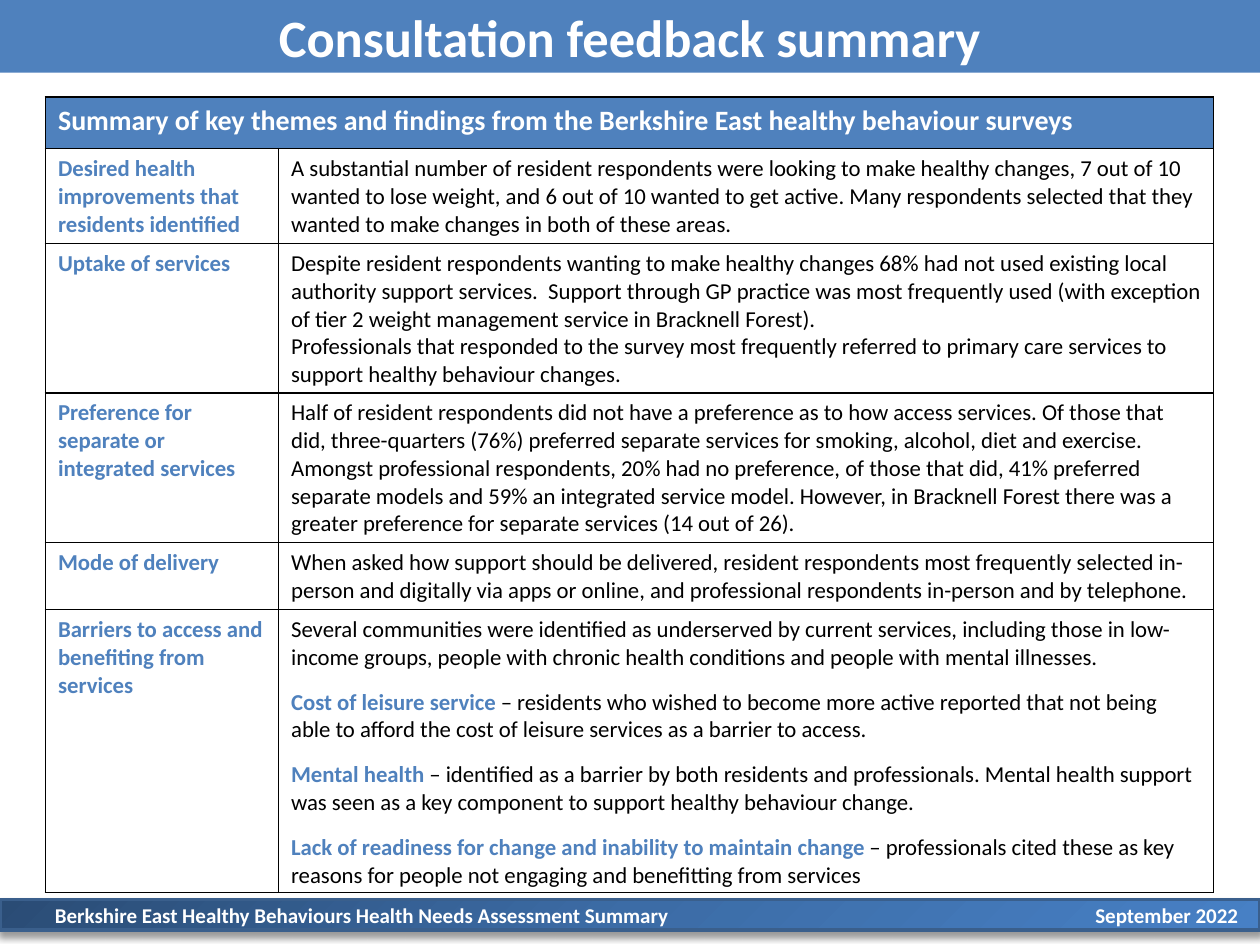
from lxml import etree
from pptx import Presentation
from pptx.enum import shapes, text
from pptx.oxml import ns
from pptx.util import Pt
from pptx.dml.color import RGBColor

INK = {"blue": "4F81BD", "white": "FFFFFF", "black": "000000", "edge": "3A5F8C"}
FADE = [(0, "2A4C75"), (50, "3C6CA6"), (100, "4780C5")]
WIDE, HIGH = 720, 540
COLS = [133.2, 534.2]
ROWS = [29.5, 54.3, 85.2, 85.2, 38.5, 160.5]
HEAD = "Summary of key themes and findings from the Berkshire East healthy behaviour surveys"

# Each theme: label, paragraphs as (bold lead, body), gap between paragraphs
THEMES = [
    ("Desired health improvements that residents identified", [
        ("", "A substantial number of resident respondents were looking to make healthy changes, "
             "7 out of 10 wanted to lose weight, and 6 out of 10 wanted to get active. Many "
             "respondents selected that they wanted to make changes in both of these areas."),
    ], 0),
    ("Uptake of services", [
        ("", "Despite resident respondents wanting to make healthy changes 68% had not used "
             "existing local authority support services.  Support through GP practice was most "
             "frequently used (with exception of tier 2 weight management service in Bracknell "
             "Forest)."),
        ("", "Professionals that responded to the survey most frequently referred to primary "
             "care services to support healthy behaviour changes."),
    ], 0),
    ("Preference for separate or integrated services", [
        ("", "Half of resident respondents did not have a preference as to how access services. "
             "Of those that did, three-quarters (76%) preferred separate services for smoking, "
             "alcohol, diet and exercise."),
        ("", "Amongst professional respondents, 20% had no preference, of those that did, 41% "
             "preferred separate models and 59% an integrated service model. However, in "
             "Bracknell Forest there was a greater preference for separate services (14 out of 26)."),
    ], 0),
    ("Mode of delivery", [
        ("", "When asked how support should be delivered, resident respondents most frequently "
             "selected in-person and digitally via apps or online, and professional respondents "
             "in-person and by telephone."),
    ], 0),
    ("Barriers to access and benefiting from services", [
        ("", "Several communities were identified as underserved by current services, including "
             "those in low-income groups, people with chronic health conditions and people with "
             "mental illnesses."),
        ("Cost of leisure service ",
         "– residents who wished to become more active reported that not being able to afford "
         "the cost of leisure services as a barrier to access."),
        ("Mental health ",
         "– identified as a barrier by both residents and professionals. Mental health support "
         "was seen as a key component to support healthy behaviour change."),
        ("Lack of readiness for change and inability to maintain change ",
         "– professionals cited these as key reasons for people not engaging and benefitting "
         "from services"),
    ], 9.8),
]


def node(top, tag, **attrs):
    return etree.SubElement(top, ns.qn("a:" + tag), {k: str(v) for k, v in attrs.items()})


class Deck:
    """Holds the text style and the current slide."""

    def __init__(self, font):
        self.font = font
        self.file = Presentation()
        self.file.slide_width, self.file.slide_height = Pt(WIDE), Pt(HIGH)
        self.slide = self.file.slides.add_slide(self.file.slide_layouts[6])

    def run(self, para, words, size, tint, bold=True):
        run = para.add_run()
        run.text = words
        run.font.name, run.font.size, run.font.bold = self.font, Pt(size), bold
        run.font.color.rgb = RGBColor.from_string(INK[tint])

    def frame(self, shape, words, size, align, left=0, right=0):
        """Put one white line of text in the middle of a shape's height."""
        frame = shape.text_frame
        frame.word_wrap = True
        frame.vertical_anchor = text.MSO_ANCHOR.MIDDLE
        frame.margin_left, frame.margin_right = Pt(left), Pt(right)
        frame.margin_top = frame.margin_bottom = 0
        frame.paragraphs[0].alignment = align
        self.run(frame.paragraphs[0], words, size, "white")

    def bar(self, top, high):
        bar = self.slide.shapes.add_shape(
            shapes.MSO_SHAPE.RECTANGLE, 0, Pt(top), Pt(WIDE), Pt(high))
        bar.shadow.inherit = False
        bar.fill.solid()
        bar.fill.fore_color.rgb = RGBColor.from_string(INK["blue"])
        bar.line.fill.background()
        return bar

    def label(self, top, high, words, size, align, right):
        box = self.slide.shapes.add_textbox(Pt(WIDE / 2), Pt(top), Pt(WIDE / 2), Pt(high))
        self.frame(box, words, size, align, right=right)

    def shade(self, bar):
        """Give a bar the three-stop fade, an outline and a soft shadow."""
        bar.line.color.rgb = RGBColor.from_string(INK["edge"])
        bar.line.width = Pt(2)
        bar.fill.gradient()
        bar.fill.gradient_angle = 315
        props = bar.element.spPr
        stops = props.find(".//" + ns.qn("a:gsLst"))
        for stop in list(stops):
            stops.remove(stop)
        for place, tint in FADE:
            node(node(stops, "gs", pos=place * 1000), "srgbClr", val=tint)
        cast = node(props.find(ns.qn("a:effectLst")), "outerShdw", blurRad=Pt(4),
                    dist=Pt(3), dir=5400000, rotWithShape=0)
        node(node(cast, "srgbClr", val=INK["black"]), "alpha", val=40000)

    def grid(self, left, top, cols, rows):
        table = self.slide.shapes.add_table(
            len(rows), len(cols), Pt(left), Pt(top), Pt(sum(cols)), Pt(sum(rows))).table
        table.first_row = table.horz_banding = False
        for col, wide in zip(table.columns, cols):
            col.width = Pt(wide)
        for row, high in zip(table.rows, rows):
            row.height = Pt(high)
        for cell in table.iter_cells():
            props = cell._tc.get_or_add_tcPr()
            for side in ("lnL", "lnR", "lnT", "lnB"):
                line = node(props, side, w=Pt(1))
                node(node(line, "solidFill"), "srgbClr", val=INK["black"])
            cell.fill.background()
        return table

    def cell(self, cell, paras, gap=0):
        """Fill a cell with paragraphs, each a list of run arguments."""
        frame = cell.text_frame
        for num, runs in enumerate(paras):
            para = frame.add_paragraph() if num else frame.paragraphs[0]
            if num and gap:
                para.space_before = Pt(gap)
            for args in runs:
                self.run(para, *args)


def main():
    deck = Deck("Calibri")
    deck.frame(deck.bar(0, 41.6), "Consultation feedback summary", 30, text.PP_ALIGN.CENTER)

    top, high = 514.1, 17.3
    foot = deck.bar(top, high)
    deck.shade(foot)
    deck.frame(foot, "Berkshire East Healthy Behaviours Health Needs Assessment Summary",
               12, text.PP_ALIGN.LEFT, left=31.4)
    deck.label(top, high, "September 2022", 12, text.PP_ALIGN.RIGHT, 12.4)

    table = deck.grid(26, 55.5, COLS, ROWS)
    head = table.cell(0, 0)
    head.merge(table.cell(0, 1))
    head.fill.solid()
    head.fill.fore_color.rgb = RGBColor.from_string(INK["blue"])
    deck.cell(head, [[(HEAD, 16, "white")]])
    for row, (name, paras, gap) in enumerate(THEMES, 1):
        deck.cell(table.cell(row, 0), [[(name, 13, "blue")]])
        runs = [([(lead, 13, "blue")] if lead else []) + [(body, 13, "black", False)]
                for lead, body in paras]
        deck.cell(table.cell(row, 1), runs, gap)
    deck.file.save("out.pptx")


if __name__ == "__main__":
    main()
